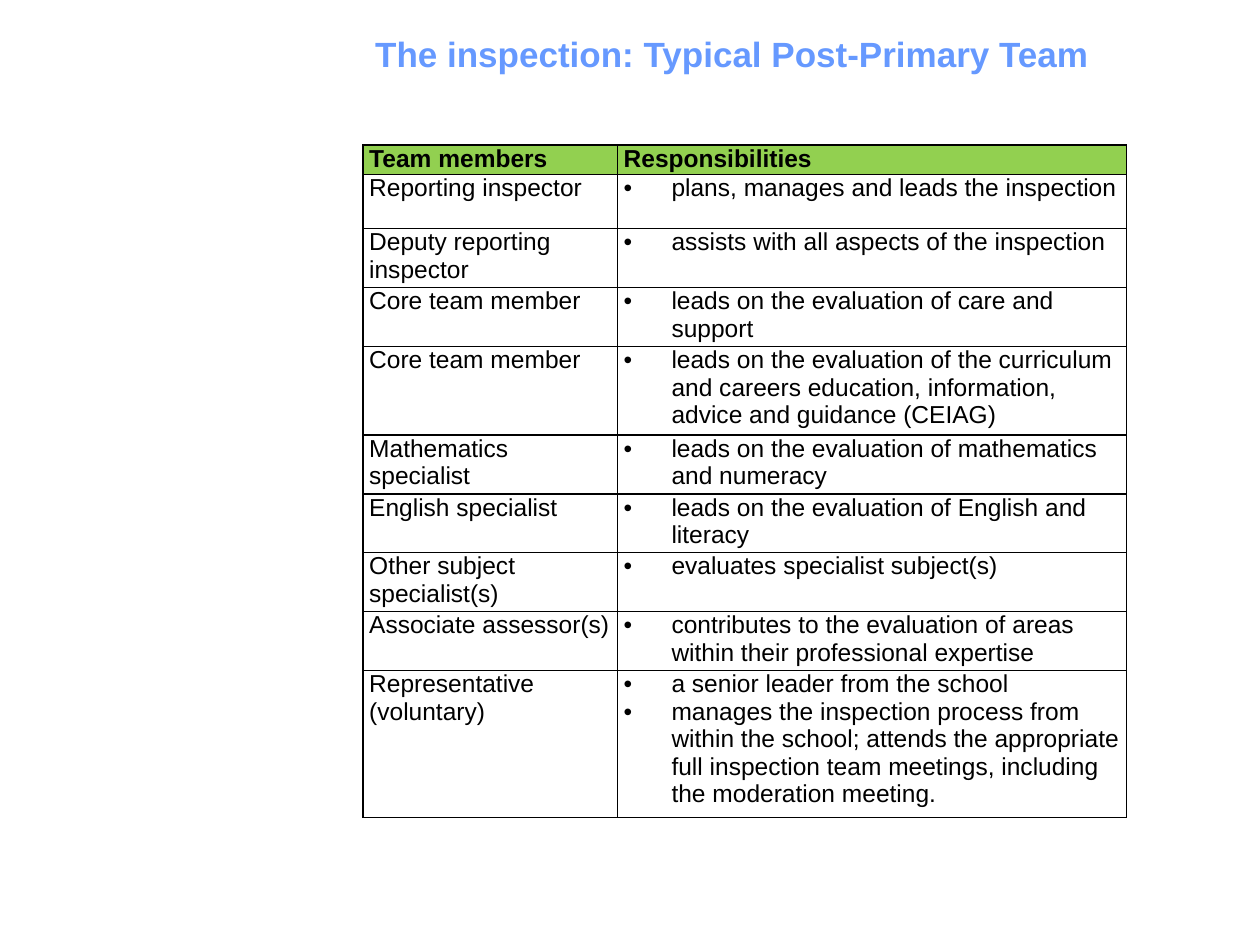
from dataclasses import dataclass

from lxml import etree
from pptx import Presentation
from pptx.dml.color import RGBColor
from pptx.enum.text import MSO_ANCHOR, PP_ALIGN
from pptx.oxml.ns import qn
from pptx.util import Inches, Pt

CENTER = PP_ALIGN.CENTER
MIDDLE = MSO_ANCHOR.MIDDLE
BLANK_LAYOUT = 6


@dataclass(frozen=True)
class Theme:
    font: str = "Arial"
    title_color: str = "6699FF"
    text_color: str = "000000"
    header_fill: str = "92D050"
    border_color: str = "000000"
    border_width: float = 1
    title_size: float = 20
    table_size: float = 14


THEME = Theme()
TITLE = "The inspection: Typical Post-Primary Team"
HEADINGS = ("Team members", "Responsibilities")
TEAM = [
    ("Reporting inspector", ["plans, manages and leads the inspection"], 0.43),
    ("Deputy reporting inspector", ["assists with all aspects of the inspection"], 0.47),
    ("Core team member", ["leads on the evaluation of care and support"], 0.31),
    ("Core team member", ["leads on the evaluation of the curriculum and careers education, "
                          "information, advice and guidance (CEIAG)"], 0.39),
    ("Mathematics specialist", ["leads on the evaluation of mathematics and numeracy"], 0.35),
    ("English specialist", ["leads on the evaluation of English and literacy"], 0.31),
    ("Other subject specialist(s)", ["evaluates specialist subject(s)"], 0.35),
    ("Associate assessor(s)", ["contributes to the evaluation of areas within their "
                               "professional expertise"], 0.41),
    ("Representative (voluntary)", [
        "a senior leader from the school",
        "manages the inspection process from within the school; attends the appropriate "
        "full inspection team meetings, including the moderation meeting."], 0.87),
]
COLUMN_WIDTHS = (2.02, 4.04)
HEADER_HEIGHT = 0.17
TABLE_HEIGHT = 5.34
BULLET_INDENT = Inches(0.38)


def apply_format(target, values):
    for name, value in values.items():
        setattr(target, name, value)


def style_font(font, size, color, bold=False):
    apply_format(font, {"name": THEME.font, "size": Pt(size), "bold": bold})
    font.color.rgb = RGBColor.from_string(color)


def add_title(page):
    box = page.shapes.add_textbox(Inches(2.17), Inches(0.05), Inches(7.16), Inches(0.55))
    frame = box.text_frame
    apply_format(frame, {
        "word_wrap": True, "vertical_anchor": MIDDLE,
        "margin_left": Inches(0.22), "margin_right": Inches(0.1),
        "margin_top": Inches(0.2), "margin_bottom": 0,
    })
    para = frame.paragraphs[0]
    para.alignment = CENTER
    span = para.add_run()
    span.text = TITLE
    style_font(span.font, THEME.title_size, THEME.title_color, bold=True)


def add_bullet(para):
    properties = para._p.get_or_add_pPr()
    properties.set("marL", str(BULLET_INDENT))
    properties.set("indent", str(-BULLET_INDENT))
    etree.SubElement(properties, qn("a:buFont"), typeface=THEME.font)
    etree.SubElement(properties, qn("a:buChar"), char="•")


def add_borders(cell):
    properties = cell._tc.get_or_add_tcPr()
    for side in "LRTB":
        line = etree.SubElement(properties, qn(f"a:ln{side}"), w=str(Pt(THEME.border_width)))
        fill = etree.SubElement(line, qn("a:solidFill"))
        etree.SubElement(fill, qn("a:srgbClr"), val=THEME.border_color)


def fill_cell(cell, lines, header=False, bulleted=False):
    apply_format(cell, {
        "margin_left": Inches(0.05), "margin_right": Inches(0.05),
        "margin_top": 0, "margin_bottom": 0,
    })
    add_borders(cell)
    if header:
        cell.fill.solid()
        cell.fill.fore_color.rgb = RGBColor.from_string(THEME.header_fill)
    else:
        cell.fill.background()
    frame = cell.text_frame
    for index, line in enumerate(lines):
        para = frame.add_paragraph() if index else frame.paragraphs[0]
        if bulleted:
            add_bullet(para)
        span = para.add_run()
        span.text = line
        style_font(span.font, THEME.table_size, THEME.text_color, bold=header)


def add_team_table(page):
    heights = [HEADER_HEIGHT] + [height for _, _, height in TEAM]
    holder = page.shapes.add_table(
        len(heights), len(COLUMN_WIDTHS), Inches(2.88), Inches(1.15),
        Inches(sum(COLUMN_WIDTHS)), Inches(TABLE_HEIGHT))
    table = holder.table
    apply_format(table, {"first_row": False, "horz_banding": False})
    for column, width in zip(table.columns, COLUMN_WIDTHS):
        column.width = Inches(width)
    for row, height in zip(table.rows, heights):
        row.height = Inches(height)
    holder.height = Inches(TABLE_HEIGHT)
    for column, heading in enumerate(HEADINGS):
        fill_cell(table.cell(0, column), [heading], header=True)
    for row, (member, duties, _) in enumerate(TEAM, start=1):
        fill_cell(table.cell(row, 0), [member])
        fill_cell(table.cell(row, 1), duties, bulleted=True)


def main():
    deck = Presentation()
    apply_format(deck, {"slide_width": Inches(10), "slide_height": Inches(7.5)})
    page = deck.slides.add_slide(deck.slide_layouts[BLANK_LAYOUT])
    add_title(page)
    add_team_table(page)
    deck.save("out.pptx")


if __name__ == "__main__":
    main()
